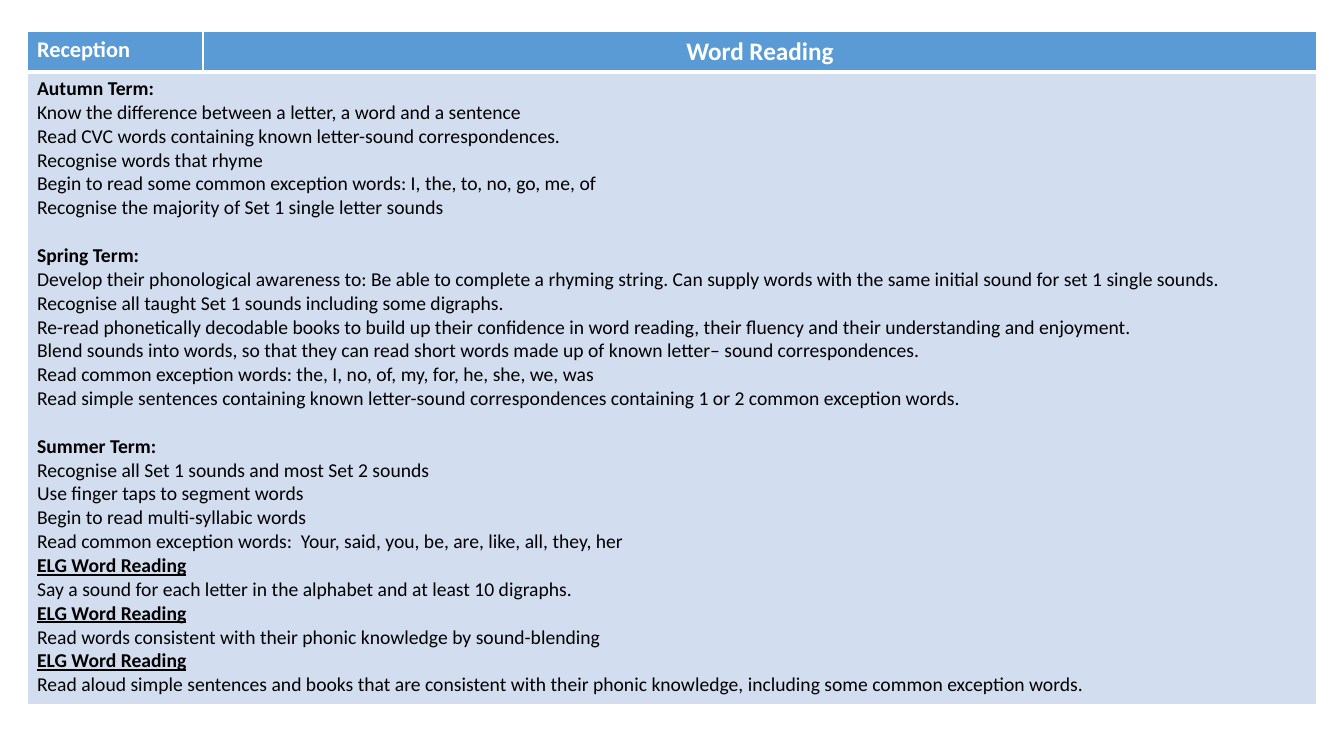
from lxml.etree import SubElement
from pptx import Presentation
from pptx.dml.color import RGBColor
from pptx.enum.text import PP_ALIGN
from pptx.oxml.ns import qn
from pptx.util import Pt

PX = 914400 / 100.8
SLIDE_WIDTH, SLIDE_HEIGHT = 1344, 756
FONT = "Calibri"
WHITE = RGBColor(0xFF, 0xFF, 0xFF)
BLACK = RGBColor(0x00, 0x00, 0x00)
HEADER_BLUE = RGBColor(0x5B, 0x9B, 0xD5)
BODY_BLUE = RGBColor(0xD2, 0xDE, 0xEF)

ELG_HEADING = "ELG Word Reading"
TERMS = {
    "Autumn Term:": [
        "Know the difference between a letter, a word and a sentence",
        "Read CVC words containing known letter-sound correspondences.",
        "Recognise words that rhyme",
        "Begin to read some common exception words: I, the, to, no, go, me, of",
        "Recognise the majority of Set 1 single letter sounds",
    ],
    "Spring Term:": [
        "Develop their phonological awareness to: Be able to complete a rhyming string. "
        "Can supply words with the same initial sound for set 1 single sounds.",
        "Recognise all taught Set 1 sounds including some digraphs.",
        "Re-read phonetically decodable books to build up their confidence in word reading, "
        "their fluency and their understanding and enjoyment.",
        "Blend sounds into words, so that they can read short words made up of known "
        "letter– sound correspondences.",
        "Read common exception words: the, I, no, of, my, for, he, she, we, was",
        "Read simple sentences containing known letter-sound correspondences containing "
        "1 or 2 common exception words.",
    ],
    "Summer Term:": [
        "Recognise all Set 1 sounds and most Set 2 sounds",
        "Use finger taps to segment words",
        "Begin to read multi-syllabic words",
        "Read common exception words:  Your, said, you, be, are, like, all, they, her",
        ELG_HEADING,
        "Say a sound for each letter in the alphabet and at least 10 digraphs.",
        ELG_HEADING,
        "Read words consistent with their phonic knowledge by sound-blending",
        ELG_HEADING,
        "Read aloud simple sentences and books that are consistent with their phonic "
        "knowledge, including some common exception words.",
    ],
}


def px(length):
    return round(length * PX)


def style_cell(cell, fill, top=1, bottom=1):
    """Give a cell white borders (widths in points) and a solid fill."""
    properties = cell._tc.get_or_add_tcPr()
    for side, width in {"L": 1, "R": 1, "T": top, "B": bottom}.items():
        line = SubElement(properties, qn(f"a:ln{side}"), w=str(Pt(width)))
        SubElement(SubElement(line, qn("a:solidFill")), qn("a:srgbClr"), val=str(WHITE))
    cell.fill.solid()
    cell.fill.fore_color.rgb = fill


def write(paragraph, text, size, color, bold=False, underline=False):
    paragraph.text = text
    font = paragraph.runs[0].font
    font.name, font.size, font.bold = FONT, Pt(size), bold
    font.underline = underline
    font.color.rgb = color


def fill_header(row):
    for cell in row.cells:
        style_cell(cell, HEADER_BLUE, bottom=3)
    year, subject = (cell.text_frame.paragraphs[0] for cell in row.cells)
    write(year, "Reception", 16, WHITE, bold=True)
    write(subject, "Word Reading", 18, WHITE, bold=True)
    subject.alignment = PP_ALIGN.CENTER


def fill_body(row):
    for cell in row.cells:
        style_cell(cell, BODY_BLUE, top=3)
    body = row.cells[0]
    body.merge(row.cells[1])
    lines = [line for term, goals in TERMS.items() for line in (term, *goals)]
    body.text_frame.text = "\n".join(lines)
    for index, (paragraph, line) in enumerate(zip(body.text_frame.paragraphs, lines)):
        is_elg = line == ELG_HEADING
        write(paragraph, line, 14, BLACK, bold=is_elg or line in TERMS, underline=is_elg)
        # One line of space between terms
        if line in TERMS and index:
            paragraph.space_before = Pt(17)


def add_curriculum_table(slide, left, top, width, height):
    frame = slide.shapes.add_table(2, 2, px(left), px(top), px(width), px(height))
    table = frame.table
    year_width, header_height = 176, 40
    for column, size in zip(table.columns, (year_width, width - year_width)):
        column.width = px(size)
    for row, size in zip(table.rows, (header_height, height - header_height)):
        row.height = px(size)
    fill_header(table.rows[0])
    fill_body(table.rows[1])


def main():
    presentation = Presentation()
    presentation.slide_width = px(SLIDE_WIDTH)
    presentation.slide_height = px(SLIDE_HEIGHT)
    slide = presentation.slides.add_slide(presentation.slide_layouts[6])
    add_curriculum_table(slide, 27, 31, 1290, 673)
    presentation.save("out.pptx")


if __name__ == "__main__":
    main()
